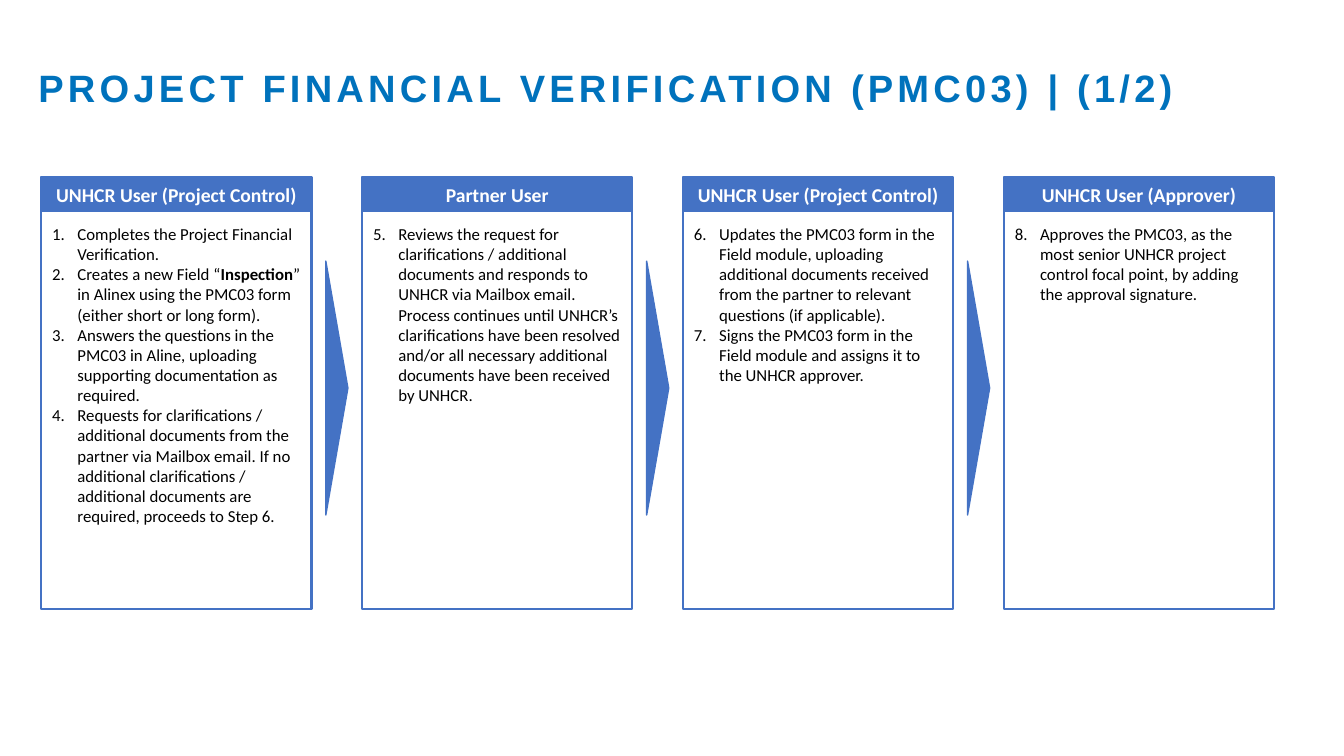
from pptx import Presentation
from pptx.dml.color import RGBColor
from pptx.enum.shapes import MSO_SHAPE
from pptx.enum.text import MSO_ANCHOR, PP_ALIGN
from pptx.util import Pt
from lxml.etree import SubElement
from pptx.oxml.ns import qn

BLUE = RGBColor(0x44, 0x72, 0xC4)
AZURE = RGBColor(0x00, 0x72, 0xBC)
WHITE = RGBColor(0xFF, 0xFF, 0xFF)
BLACK = RGBColor(0, 0, 0)

LEFT, TOP, WIDE, HIGH = 29.5, 126.7, 193, 308.2
PITCH, HEAD = 229.2, 24.5

STAGES = [
    ("UNHCR User (Project Control)", 1, [
        "Completes the Project Financial Verification.",
        "Creates a new Field “*Inspection*” in Alinex using the PMC03 form (either short or long form).",
        "Answers the questions in the PMC03 in Aline, uploading supporting documentation as required.",
        "Requests for clarifications / additional documents from the partner via Mailbox email. "
        "If no additional clarifications / additional documents are required, proceeds to Step 6."]),
    ("Partner User", 5, [
        "Reviews the request for clarifications / additional documents and responds to UNHCR via "
        "Mailbox email. Process continues until UNHCR’s clarifications have been resolved and/or "
        "all necessary additional documents have been received by UNHCR."]),
    ("UNHCR User (Project Control)", 6, [
        "Updates the PMC03 form in the Field module, uploading additional documents received "
        "from the partner to relevant questions (if applicable).",
        "Signs the PMC03 form in the Field module and assigns it to the UNHCR approver."]),
    ("UNHCR User (Approver)", 8, [
        "Approves the PMC03, as the most senior UNHCR project control focal point, "
        "by adding the approval signature."]),
]


def style(run, font, size, color, bold=False):
    """Set the look of a run."""
    run.font.name = font
    run.font.size = Pt(size)
    run.font.color.rgb = color
    run.font.bold = bold


def add_title(slide, text):
    """Place and format the slide title."""
    title = slide.shapes.title
    title.left, title.top, title.width, title.height = Pt(20.2), Pt(38.9), Pt(898), Pt(43.2)
    frame = title.text_frame
    frame.text = text
    frame.vertical_anchor = MSO_ANCHOR.TOP
    para = frame.paragraphs[0]
    para.alignment = PP_ALIGN.LEFT
    para.line_spacing = 1.1
    run = para.runs[0]
    style(run, "Arial", 27.2, AZURE, True)
    run.font._element.set("spc", "300")


def add_block(slide, kind, box, line, filled=True):
    """Draw a blue shape, filled or in outline."""
    shape = slide.shapes.add_shape(kind, *map(Pt, box))
    shape.shadow.inherit = False
    if filled:
        shape.fill.solid()
        shape.fill.fore_color.rgb = BLUE
    else:
        shape.fill.background()
    shape.line.color.rgb = BLUE
    shape.line.width = Pt(line)
    return shape


def add_header(slide, left, text):
    """Draw the header bar of a stage."""
    bar = add_block(slide, MSO_SHAPE.RECTANGLE, (left, TOP, WIDE, HEAD), 0.75)
    frame = bar.text_frame
    frame.text = text
    frame.word_wrap = True
    frame.vertical_anchor = MSO_ANCHOR.MIDDLE
    frame.margin_top = frame.margin_bottom = Pt(3)
    para = frame.paragraphs[0]
    para.alignment = PP_ALIGN.CENTER
    style(para.runs[0], "Calibri", 14, WHITE, True)


def number(para, start):
    """Give a paragraph a hanging automatic number."""
    props = para._p.get_or_add_pPr()
    props.set("marL", str(Pt(18)))
    props.set("indent", str(-Pt(18)))
    SubElement(props, qn("a:buFont"), typeface="+mj-lt")
    SubElement(props, qn("a:buAutoNum"), type="arabicPeriod", startAt=str(start))


def add_steps(slide, left, start, steps):
    """Write the numbered steps of a stage, with starred words in bold."""
    box = slide.shapes.add_textbox(Pt(left + 0.7), Pt(156.2), Pt(WIDE), Pt(225))
    frame = box.text_frame
    frame.word_wrap = True
    frame.text = "\n".join(steps)
    for para, step in zip(frame.paragraphs, steps):
        number(para, start)
        para.clear()
        for i, part in enumerate(step.split("*")):
            run = para.add_run()
            run.text = part
            style(run, "Calibri", 12, BLACK, i % 2 == 1)


def add_arrow(slide, left):
    """Draw the pointer that follows a stage."""
    long, thick = 181.4, 15.8
    mid = left + (WIDE + PITCH) / 2
    box = (mid - long / 2, 269.3, long, thick)
    add_block(slide, MSO_SHAPE.ISOSCELES_TRIANGLE, box, 1).rotation = 90


def main():
    """Build and save the slide."""
    deck = Presentation()
    deck.slide_width, deck.slide_height = Pt(960), Pt(540)
    slide = deck.slides.add_slide(deck.slide_layouts[5])
    add_title(slide, "PROJECT FINANCIAL VERIFICATION (PMC03) | (1/2)")
    for i, (head, start, steps) in enumerate(STAGES):
        left = LEFT + i * PITCH
        add_block(slide, MSO_SHAPE.RECTANGLE, (left, TOP, WIDE, HIGH), 1.5, False)
        add_header(slide, left, head)
        add_steps(slide, left, start, steps)
        if i < len(STAGES) - 1:
            add_arrow(slide, left)
    deck.save("out.pptx")


if __name__ == "__main__":
    main()
